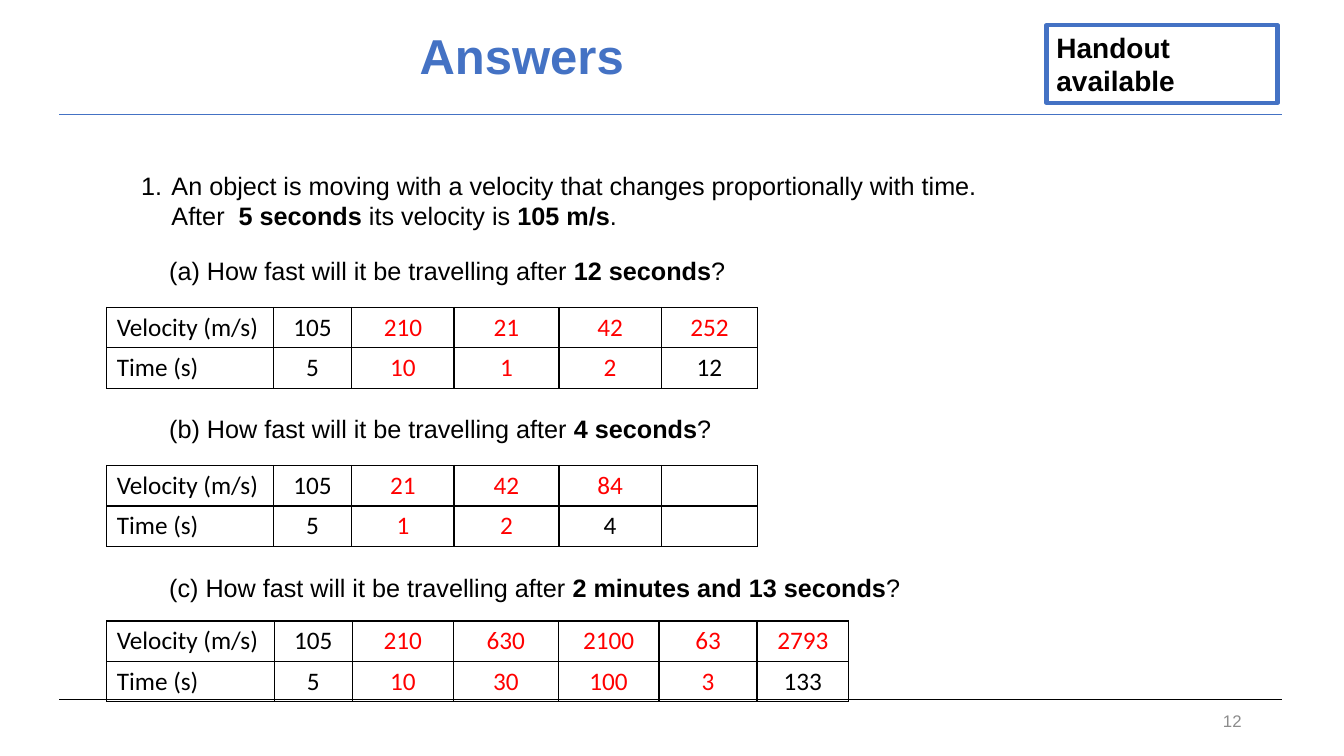
import pptx
import pptx.util
import pptx.dml.color
import pptx.enum.shapes
import pptx.enum.text
import pptx.oxml.ns
from lxml import etree

Pt = pptx.util.Pt
qn = pptx.oxml.ns.qn
ALIGN = pptx.enum.text.PP_ALIGN
ANCHOR = pptx.enum.text.MSO_ANCHOR
BLUE, BLACK, RED, GREY = "4472C4", "000000", "FF0000", "8C8C8C"
TABLE_LEFT, ROW_HEIGHT = 76.3, 28.9
SHORT_COLS = [119, 56, 73, 75, 73, 69]
LONG_COLS = [119.5, 56, 72, 75, 72, 70, 65.5]


def rgb(value):
    return pptx.dml.color.RGBColor.from_string(value)


def set_font(p, size, color=BLACK, name="Arial", bold=False):
    p.font.name = name
    p.font.size = Pt(size)
    p.font.bold = bold
    p.font.color.rgb = rgb(color)


def add_rule(slide, y, color):
    line = slide.shapes.add_connector(
        pptx.enum.shapes.MSO_CONNECTOR.STRAIGHT, Pt(42.5), Pt(y), Pt(916), Pt(y))
    line.line.color.rgb = rgb(color)
    line.line.width = Pt(0.75)
    etree.SubElement(line._element.spPr, qn("a:effectLst"))


def add_title(slide, x, y, w, h):
    title = slide.shapes.title
    title.left, title.top, title.width, title.height = Pt(x), Pt(y), Pt(w), Pt(h)
    tf = title.text_frame
    tf.text = "Answers"
    tf.vertical_anchor = ANCHOR.TOP
    p = tf.paragraphs[0]
    p.alignment = ALIGN.LEFT
    p.line_spacing = 0.9
    set_font(p, 35, BLUE, bold=True)


def add_handout_label(slide, x, y, w, h):
    sp = slide.shapes.add_shape(
        pptx.enum.shapes.MSO_SHAPE.RECTANGLE, Pt(x), Pt(y), Pt(w), Pt(h))
    sp.shadow.inherit = False
    sp.fill.background()
    sp.line.color.rgb = rgb(BLUE)
    sp.line.width = Pt(3)
    tf = sp.text_frame
    tf.word_wrap = True
    tf.vertical_anchor = ANCHOR.TOP
    p = tf.paragraphs[0]
    p.text = "Handout\vavailable"
    p.alignment = ALIGN.LEFT
    set_font(p, 20, bold=True)


def add_text(slide, x, y, w, h, text, size=18, color=BLACK):
    """Adds a text box; parts of the text between ** marks are bold."""
    tf = slide.shapes.add_textbox(Pt(x), Pt(y), Pt(w), Pt(h)).text_frame
    tf.word_wrap = True
    p = tf.paragraphs[0]
    set_font(p, size, color)
    for i, part in enumerate(text.split("**")):
        r = p.add_run()
        r.text = part
        r.font.bold = i % 2 == 1
    return p


def add_numbered_question(slide, x, y, w, h, text):
    p = add_text(slide, x, y, w, h, text)
    p.space_after = Pt(6)
    pPr = p._p.get_or_add_pPr()
    pPr.set("marL", str(Pt(27.4)))
    pPr.set("indent", str(-Pt(21.6)))
    number = etree.Element(qn("a:buAutoNum"), type="arabicPeriod")
    pPr.find(qn("a:spcAft")).addnext(number)


def add_page_number(slide, x, y, w, h, number):
    p = add_text(slide, x, y, w, h, number, 12, GREY)
    p.alignment = ALIGN.RIGHT
    slide.shapes[-1].text_frame.vertical_anchor = ANCHOR.MIDDLE


def add_borders(cell):
    tcPr = cell._tc.get_or_add_tcPr()
    for i, side in enumerate(("a:lnL", "a:lnR", "a:lnT", "a:lnB")):
        ln = etree.Element(qn(side), w=str(Pt(1)))
        fill = etree.SubElement(ln, qn("a:solidFill"))
        etree.SubElement(fill, qn("a:srgbClr"), val=BLACK)
        tcPr.insert(i, ln)


def add_ratio_table(slide, x, y, widths, velocities, times):
    """Worked values are red; labels, the given pair and the target time are black."""
    rows = [["Velocity (m/s)", *velocities], ["Time (s)", *times]]
    frame = slide.shapes.add_table(
        2, len(widths), Pt(x), Pt(y), Pt(sum(widths)), Pt(2 * ROW_HEIGHT))
    table = frame.table
    table.first_row = table.horz_banding = False
    for column, width in zip(table.columns, widths):
        column.width = Pt(width)
    for i, row in enumerate(rows):
        table.rows[i].height = Pt(ROW_HEIGHT)
        for j in range(len(widths)):
            cell = table.cell(i, j)
            cell.fill.background()
            add_borders(cell)
            p = cell.text_frame.paragraphs[0]
            if j < len(row):
                p.text = str(row[j])
            is_target = i == 1 and j == len(times)
            p.alignment = ALIGN.CENTER if j else ALIGN.LEFT
            set_font(p, 18, BLACK if j < 2 or is_target else RED, "Calibri")


def add_part(slide, y, text, table_y, widths, velocities, times):
    p = add_text(slide, 113.8, y, 592, 29, text)
    p.space_after = Pt(6)
    add_ratio_table(slide, TABLE_LEFT, table_y, widths, velocities, times)


def build_answers_slide(prs):
    slide = prs.slides.add_slide(prs.slide_layouts[5])
    add_rule(slide, 500, BLACK)
    add_rule(slide, 82, BLUE)
    add_page_number(slide, 678, 500.5, 216, 29, "12")
    add_title(slide, 292.5, 19.5, 176, 53)
    add_handout_label(slide, 747.5, 18, 165, 55.5)
    add_numbered_question(
        slide, 88, 118, 627, 51,
        "An object is moving with a velocity that changes proportionally with time. "
        "After  **5 seconds **its velocity is **105 m/s**.")
    add_part(slide, 178.5, "(a) How fast will it be travelling after **12 seconds**?",
             219.6, SHORT_COLS, [105, 210, 21, 42, 252], [5, 10, 1, 2, 12])
    add_part(slide, 292, "(b) How fast will it be travelling after **4 seconds**?",
             332.5, SHORT_COLS, [105, 21, 42, 84], [5, 1, 2, 4])
    add_part(slide, 405, "(c) How fast will it be travelling after **2 minutes and 13 seconds**?",
             443.5, LONG_COLS, [105, 210, 630, 2100, 63, 2793], [5, 10, 30, 100, 3, 133])


def main():
    prs = pptx.Presentation()
    prs.slide_width, prs.slide_height = Pt(960), Pt(540)
    build_answers_slide(prs)
    prs.save("out.pptx")


if __name__ == "__main__":
    main()
